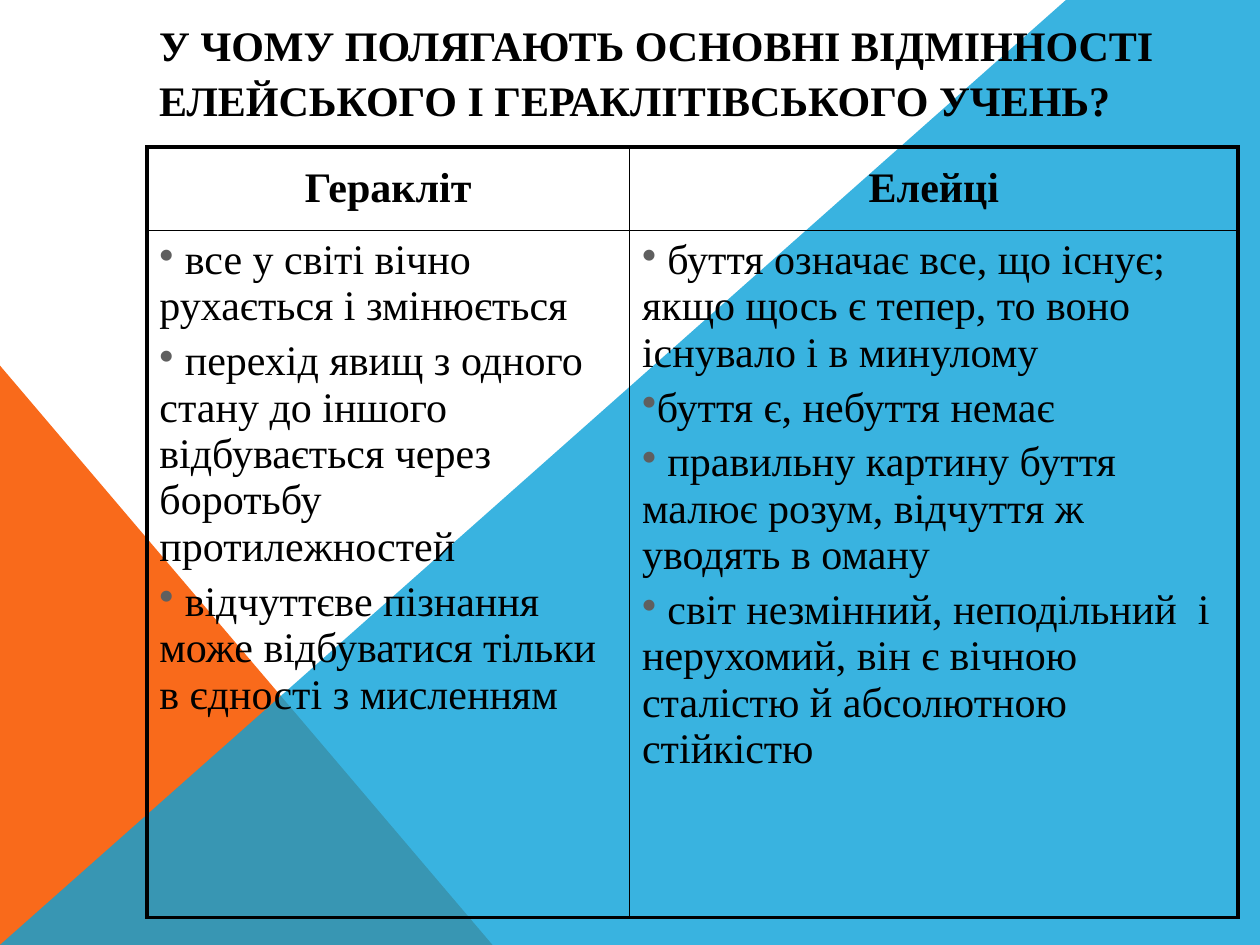
from lxml.etree import SubElement
from pptx import Presentation
from pptx.dml.color import RGBColor
from pptx.enum.shapes import MSO_SHAPE
from pptx.enum.text import MSO_ANCHOR, MSO_AUTO_SIZE, PP_ALIGN
from pptx.oxml import parse_xml
from pptx.oxml.ns import nsdecls, qn
from pptx.util import Cm, Pt

TITLE = "У ЧОМУ ПОЛЯГАЮТЬ ОСНОВНІ ВІДМІННОСТІ ЕЛЕЙСЬКОГО І ГЕРАКЛІТІВСЬКОГО УЧЕНЬ?"
COLUMNS = [
    ("Геракліт", [
        " все у світі вічно рухається і змінюється",
        " перехід явищ з одного стану до іншого відбувається через боротьбу протилежностей",
        " відчуттєве пізнання може відбуватися тільки в єдності з мисленням",
    ]),
    ("Елейці", [
        " буття означає все, що існує;  якщо щось є тепер, то воно існувало і в минулому",
        "буття є, небуття немає",
        " правильну картину буття малює розум, відчуття ж уводять в оману",
        " світ незмінний, неподільний  і нерухомий, він є вічною сталістю й абсолютною стійкістю",
    ]),
]

FONT = "Times New Roman"
BLACK = RGBColor(0x00, 0x00, 0x00)
ORANGE = RGBColor(0xF9, 0x6A, 0x1B)
BLUE = RGBColor(0x08, 0xA1, 0xD9)
BULLET_GRAY = RGBColor(0x5F, 0x5F, 0x5F)
BLUE_OPACITY = 80
OUTER_BORDER, INNER_BORDER = Pt(2.25), Pt(1)

SLIDE_WIDTH, SLIDE_HEIGHT = Cm(25.4), Cm(19.05)
TABLE_LEFT, TABLE_TOP = Cm(2.96), Cm(2.96)
COLUMN_WIDTHS = [Cm(9.73), Cm(12.27)]
ROW_HEIGHTS = [Cm(1.69), Cm(13.85)]


def write(frame, lines, bold=False, align=PP_ALIGN.LEFT, space_before=None,
          line_spacing=None, bullet=None):
    for index, line in enumerate(lines):
        paragraph = frame.add_paragraph() if index else frame.paragraphs[0]
        paragraph.alignment = align
        paragraph.space_before = space_before
        paragraph.line_spacing = line_spacing
        run = paragraph.add_run()
        run.text = line
        run.font.name = FONT
        run.font.size = Pt(24)
        run.font.bold = bold
        run.font.color.rgb = BLACK
        if bullet:
            properties = paragraph._p.get_or_add_pPr()
            color = SubElement(properties, qn("a:buClr"))
            SubElement(color, qn("a:srgbClr"), val=str(BULLET_GRAY))
            SubElement(properties, qn("a:buChar"), char=bullet)


def set_borders(cell, widths):
    """Draw the borders; widths are in the order left, right, top, bottom."""
    properties = cell._tc.get_or_add_tcPr()
    for index, (side, width) in enumerate(zip("LRTB", widths)):
        properties.insert(index, parse_xml(
            f'<a:ln{side} {nsdecls("a")} w="{int(width)}"><a:solidFill>'
            f'<a:srgbClr val="{BLACK}"/></a:solidFill></a:ln{side}>'))


def paint(shape, color):
    shape.shadow.inherit = False
    shape.fill.solid()
    shape.fill.fore_color.rgb = color
    shape.line.fill.background()


def add_background(slide):
    triangle = slide.shapes.add_shape(
        MSO_SHAPE.RIGHT_TRIANGLE, 0, Cm(7.37), Cm(9.93), SLIDE_HEIGHT - Cm(7.37))
    paint(triangle, ORANGE)

    builder = slide.shapes.build_freeform(0, SLIDE_HEIGHT)
    builder.add_line_segments([
        (Cm(21.49), 0), (SLIDE_WIDTH, 0), (SLIDE_WIDTH, SLIDE_HEIGHT)], close=True)
    wedge = builder.convert_to_shape()
    paint(wedge, BLUE)
    color = wedge._element.spPr.find(qn("a:solidFill")).find(qn("a:srgbClr"))
    SubElement(color, qn("a:alpha"), val=str(BLUE_OPACITY * 1000))


def add_title(slide):
    title = slide.shapes.title
    title.left, title.top = Cm(2.96), Cm(0.42)
    title.width, title.height = Cm(21.6), Cm(2.12)
    frame = title.text_frame
    frame.word_wrap = True
    frame.auto_size = MSO_AUTO_SIZE.NONE
    frame.vertical_anchor = MSO_ANCHOR.BOTTOM
    frame.margin_left = frame.margin_right = Cm(0.25)
    frame.margin_top, frame.margin_bottom = Cm(0.13), Cm(0.03)
    write(frame, [TITLE], bold=True, line_spacing=1.08)
    # Bring the title in front of the background shapes
    slide.shapes._spTree.append(title._element)


def add_comparison(slide):
    table = slide.shapes.add_table(
        len(ROW_HEIGHTS), len(COLUMNS), TABLE_LEFT, TABLE_TOP,
        sum(COLUMN_WIDTHS), sum(ROW_HEIGHTS)).table
    table.first_row = table.horz_banding = False
    for row, height in zip(table.rows, ROW_HEIGHTS):
        row.height = height
    last_row, last_column = len(ROW_HEIGHTS) - 1, len(COLUMNS) - 1
    for column, (heading, points) in enumerate(COLUMNS):
        table.columns[column].width = COLUMN_WIDTHS[column]
        header, body = table.cell(0, column), table.cell(1, column)
        header.vertical_anchor = MSO_ANCHOR.MIDDLE
        write(header.text_frame, [heading], bold=True, align=PP_ALIGN.CENTER,
              space_before=Pt(4.8))
        write(body.text_frame, points, space_before=Pt(4.8), bullet="•")
        for row, cell in enumerate((header, body)):
            cell.fill.background()
            on_edge = (column == 0, column == last_column, row == 0, row == last_row)
            set_borders(cell, [OUTER_BORDER if edge else INNER_BORDER for edge in on_edge])


def main():
    presentation = Presentation()
    presentation.slide_width, presentation.slide_height = SLIDE_WIDTH, SLIDE_HEIGHT
    slide = presentation.slides.add_slide(presentation.slide_layouts[5])
    add_background(slide)
    add_title(slide)
    add_comparison(slide)
    presentation.save("out.pptx")


if __name__ == "__main__":
    main()
